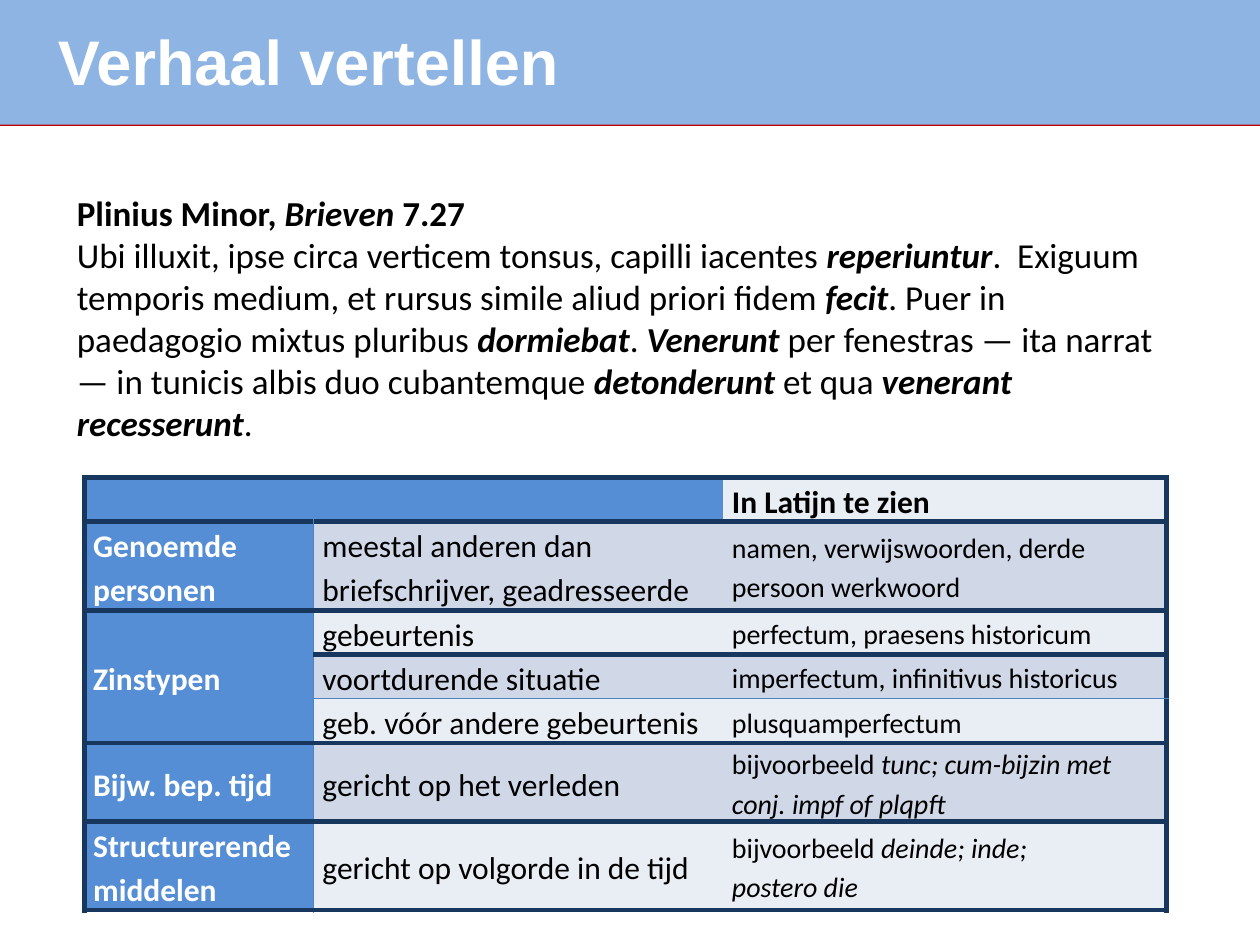
from lxml import etree
from pptx import Presentation
from pptx.dml.color import RGBColor
from pptx.enum.shapes import MSO_CONNECTOR, MSO_SHAPE
from pptx.enum.text import MSO_ANCHOR, MSO_AUTO_SIZE, PP_ALIGN
from pptx.oxml.ns import qn
from pptx.util import Inches, Pt

STRAIGHT, RECT = MSO_CONNECTOR.STRAIGHT, MSO_SHAPE.RECTANGLE
TOP, MIDDLE = MSO_ANCHOR.TOP, MSO_ANCHOR.MIDDLE
LEFT, NO_FIT = PP_ALIGN.LEFT, MSO_AUTO_SIZE.NONE

BLACK = RGBColor(0, 0, 0)
WHITE = RGBColor(0xFF, 0xFF, 0xFF)
RED = RGBColor(0xC0, 0, 0)
BANNER = RGBColor(0x8E, 0xB4, 0xE3)
HEAD = RGBColor(0x55, 0x8E, 0xD5)
BANDS = (RGBColor(0xE9, 0xED, 0xF4), RGBColor(0xD0, 0xD8, 0xE8))
DARK = (RGBColor(0x17, 0x37, 0x5E), 3)
THIN = (RGBColor(0x4F, 0x81, 0xBD), 1)

PASSAGE = [
    [("Plinius Minor, ", "b"), ("Brieven", "bi"), (" 7.27", "b")],
    [("Ubi illuxit, ipse circa verticem tonsus, capilli iacentes ", ""), ("reperiuntur", "bi"),
     (".  Exiguum temporis medium, et rursus simile aliud priori fidem ", ""), ("fecit", "bi"),
     (". Puer in paedagogio mixtus pluribus ", ""), ("dormiebat", "bi"), (". ", ""),
     ("Venerunt", "bi"), (" per fenestras — ita narrat — in tunicis albis duo cubantemque ", ""),
     ("detonderunt", "bi"), (" et qua ", ""), ("venerant recesserunt", "bi"), (".", "")],
]
ROWS = [
    ("", "", [[("In Latijn te zien", "b")]]),
    ("Genoemde personen", "meestal anderen dan briefschrijver, geadresseerde",
     [[("namen, verwijswoorden, derde persoon werkwoord", "")]]),
    ("Zinstypen", "gebeurtenis", [[("perfectum, praesens historicum", "")]]),
    ("", "voortdurende situatie", [[("imperfectum, infinitivus historicus", "")]]),
    ("", "geb. vóór andere gebeurtenis", [[("plusquamperfectum", "")]]),
    ("Bijw. bep. tijd", "gericht op het verleden",
     [[("bijvoorbeeld ", ""), ("tunc; cum-bijzin met conj. impf of plqpft", "i")]]),
    ("Structurerende middelen", "gericht op volgorde in de tijd",
     [[("bijvoorbeeld ", ""), ("deinde; inde;", "i")], [("postero die", "i")]]),
]


class Deck:
    """Draws on one slide, with lengths on a grid of 100 columns by 75 rows."""

    def __init__(self):
        self.prs = Presentation()
        self.prs.slide_width, self.prs.slide_height = Inches(10), Inches(7.5)
        self.s = self.prs.slides.add_slide(self.prs.slide_layouts[1])
        self.unit = self.prs.slide_width / 100

    def grid(self, *lengths):
        return [round(n * self.unit) for n in lengths]

    def line(self, x1, y1, x2, y2, color, width):
        cxn = self.s.shapes.add_connector(STRAIGHT, *self.grid(x1, y1, x2, y2))
        cxn.line.color.rgb, cxn.line.width = color, Pt(width)
        etree.SubElement(cxn._element.spPr, qn("a:effectLst"))

    def rect(self, x, y, w, h, color):
        sp = self.s.shapes.add_shape(RECT, *self.grid(x, y, w, h))
        sp.shadow.inherit = False
        sp.fill.solid()
        sp.fill.fore_color.rgb = color
        sp.line.fill.background()

    def text(self, tf, paragraphs, size, color, font="Calibri", spacing=1):
        for i, runs in enumerate(paragraphs):
            p = tf.add_paragraph() if i else tf.paragraphs[0]
            p.alignment, p.line_spacing, p.space_before = LEFT, spacing, Pt(0)
            for words, style in runs:
                r = p.add_run()
                r.text = words
                r.font.name, r.font.size, r.font.color.rgb = font, Pt(size), color
                r.font.bold, r.font.italic = "b" in style, "i" in style

    def placeholder(self, idx, box, paragraphs, size, color, font="Calibri"):
        sp = self.s.placeholders[idx]
        sp.left, sp.top, sp.width, sp.height = self.grid(*box)
        self.s.shapes._spTree.append(sp._element)
        tf = sp.text_frame
        tf.word_wrap, tf.auto_size, tf.vertical_anchor = True, NO_FIT, TOP
        self.text(tf, paragraphs, size, color, font)
        for p in tf.paragraphs:
            pPr = p._p.get_or_add_pPr()
            pPr.set("marL", "0")
            pPr.set("indent", "0")
            etree.SubElement(pPr, qn("a:buNone"))

    def border(self, cell, side, style):
        ln = etree.SubElement(cell._tc.get_or_add_tcPr(), qn(f"a:ln{side}"))
        if style is None:
            etree.SubElement(ln, qn("a:noFill"))
            return
        color, width = style
        ln.set("w", str(Pt(width)))
        fill = etree.SubElement(ln, qn("a:solidFill"))
        etree.SubElement(fill, qn("a:srgbClr"), val=str(color))

    def cell(self, cell, paragraphs, size, color, fill, edges, anchor):
        for side, style in zip("LRTB", edges):
            self.border(cell, side, style)
        cell.fill.solid()
        cell.fill.fore_color.rgb = fill
        cell.margin_left = cell.margin_right = Inches(0.07)
        cell.margin_top = cell.margin_bottom = 0
        cell.vertical_anchor = anchor
        self.text(cell.text_frame, paragraphs, size, color, spacing=1.15)

    def table(self, x, y, widths, heights, rows):
        box = self.grid(x, y, sum(widths), sum(heights))
        tbl = self.s.shapes.add_table(len(rows), len(widths), *box).table
        for col, w in zip(tbl.columns, self.grid(*widths)):
            col.width = w
        for row, h in zip(tbl.rows, self.grid(*heights)):
            row.height = h
        tbl.cell(0, 0).merge(tbl.cell(0, 1))
        tbl.cell(2, 0).merge(tbl.cell(4, 0))

        def upright(r, c):
            return DARK if c in (0, 3) else THIN if c == 1 and r else None

        def level(r, c):
            if c == 0 and r in (3, 4):
                return None
            return THIN if r == 4 else DARK

        for r, (label, meaning, latin) in enumerate(rows):
            band = BANDS[r % 2]
            columns = (
                ([[(label, "b")]] if label else [], 18, WHITE, HEAD),
                ([[(meaning, "")]] if meaning else [], 18, BLACK, band if r else HEAD),
                (latin, 16 if r else 18, BLACK, band),
            )
            for c, content in enumerate(columns):
                edges = upright(r, c), upright(r, c + 1), level(r, c), level(r + 1, c)
                self.cell(tbl.cell(r, c), *content, edges, MIDDLE if r else TOP)


def main():
    deck = Deck()
    deck.line(0, 9.9, 100, 9.9, RED, 2)
    deck.rect(0, 0, 100, 9.9, BANNER)
    deck.placeholder(0, (3.6, 1.3, 91.3, 7.1), [[("Verhaal vertellen", "b")]], 36, WHITE, "Arial")
    deck.placeholder(1, (5.1, 14.7, 87.4, 21.2), PASSAGE, 20, BLACK)
    deck.table(6.7, 37.9, (18.2, 32.5, 35.2), (3.5, 6.4, 3.4, 3.5, 3.5, 3.1, 3.1), ROWS)
    deck.prs.save("out.pptx")


if __name__ == "__main__":
    main()
